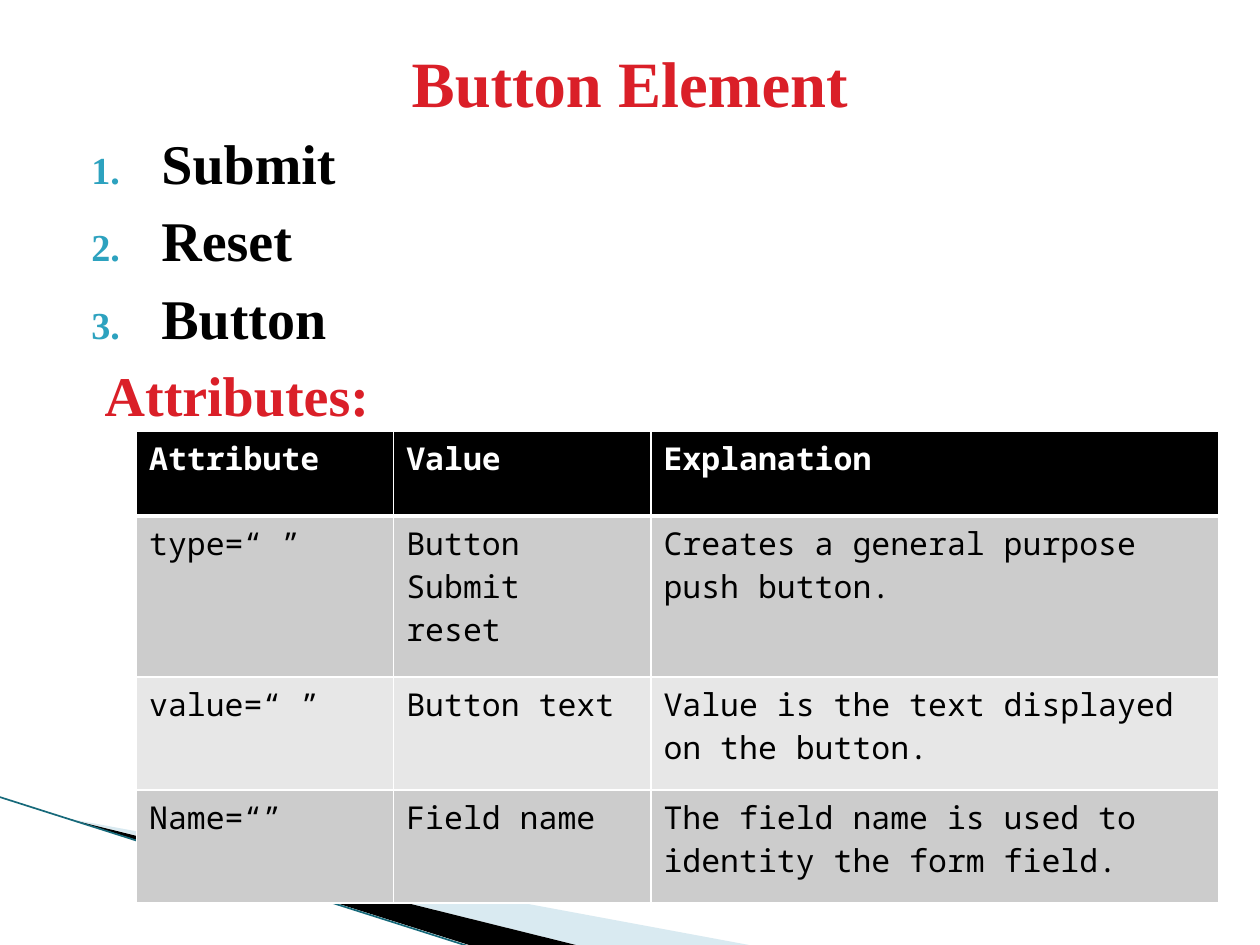
from lxml import etree
from pptx import Presentation
from pptx.dml.color import RGBColor
from pptx.enum.shapes import MSO_CONNECTOR
from pptx.enum.text import MSO_ANCHOR, MSO_AUTO_SIZE, PP_ALIGN
from pptx.oxml.ns import qn
from pptx.util import Pt

STRAIGHT = MSO_CONNECTOR.STRAIGHT
MIDDLE, TOP = MSO_ANCHOR.MIDDLE, MSO_ANCHOR.TOP
NO_FIT = MSO_AUTO_SIZE.NONE
LEFT, CENTER = PP_ALIGN.LEFT, PP_ALIGN.CENTER

COLORS = {
    "red": "DA1F28", "black": "000000", "white": "FFFFFF", "bullet": "2DA2BF",
    "wedge": "A0CBDC", "edge": "16697A", "dark_row": "CCCCCC", "light_row": "E7E7E7",
}
SERIF, MONO = "Times New Roman", "Noto Sans Mono"
BUTTON_TYPES = ["Submit", "Reset", "Button"]
ROWS = [
    ["Attribute", "Value", "Explanation"],
    ["type=“ ”", "Button\nSubmit\nreset", "Creates a general purpose push button."],
    ["value=“ ”", "Button text", "Value is the text displayed on the button."],
    ["Name=“”", "Field name", "The field name is used to identity the form field."],
]
COLUMN_WIDTHS = [147, 147, 324.5]
ROW_HEIGHTS = [48.6, 92, 64.6, 64.6]


def color(name):
    """Return the named colour."""
    return RGBColor.from_string(COLORS[name])


def add_xml(parent, tag, **attributes):
    """Append a DrawingML element and return it."""
    return etree.SubElement(parent, qn(tag), attributes)


def add_solid(parent, name):
    """Append a solid fill of the named colour."""
    add_xml(add_xml(parent, "a:solidFill"), "a:srgbClr", val=COLORS[name])


def set_font(para, face, size, name, bold):
    """Set the font of a whole paragraph."""
    para.font.name, para.font.size, para.font.bold = face, Pt(size), bold
    para.font.color.rgb = color(name)


def place(shape, box):
    """Move a shape to a box given in points."""
    shape.left, shape.top, shape.width, shape.height = map(Pt, box)


def add_wedge(page, points, name, opacity=100):
    """Draw one filled polygon without outline."""
    builder = page.shapes.build_freeform(*points[0], scale=Pt(1))
    builder.add_line_segments(points[1:], close=True)
    wedge = builder.convert_to_shape()
    wedge.shadow.inherit = False
    wedge.fill.solid()
    wedge.fill.fore_color.rgb = color(name)
    wedge.line.fill.background()
    if opacity < 100:
        tint = wedge.fill._xPr.find(qn("a:solidFill"))[0]
        add_xml(tint, "a:alpha", val=str(opacity * 1000))


def add_corner(page, box):
    """Draw the swoosh in the lower left corner."""
    left, top, width, height = box
    right, bottom = left + width, top + height
    add_wedge(page, [(left + 40, top + 13), (right, bottom),
                     (left + 329, bottom), (left + 40, top + 12)], "wedge", 40)
    add_wedge(page, [(left + 39, top + 12), (left + 329, bottom),
                     (left + 268, bottom), (left + 40, top + 12.5)], "black")
    edge = page.shapes.add_connector(
        STRAIGHT, Pt(left), Pt(top), Pt(left + 267), Pt(bottom))
    edge.line.width = Pt(0.95)
    edge.line.color.rgb = color("edge")
    add_xml(edge._element.spPr, "a:effectLst")


def fill_title(page, box):
    """Place and format the slide title."""
    title = page.shapes.title
    place(title, box)
    frame = title.text_frame
    frame.text = "Button Element"
    frame.auto_size, frame.vertical_anchor = NO_FIT, MIDDLE
    para = frame.paragraphs[0]
    para.alignment = CENTER
    set_font(para, SERIF, 36.9, "red", True)


def fill_list(page, box):
    """Place the numbered button types and the heading below them."""
    body = page.placeholders[1]
    place(body, box)
    frame = body.text_frame
    frame.text = "\n".join(BUTTON_TYPES + ["Attributes:"])
    frame.auto_size, frame.vertical_anchor = NO_FIT, TOP
    for index, para in enumerate(frame.paragraphs):
        numbered = index < len(BUTTON_TYPES)
        properties = para._p.get_or_add_pPr()
        properties.set("marL", str(Pt(49 if numbered else 16.6)))
        properties.set("indent", str(Pt(-40 if numbered else 0)))
        if numbered:
            tint = add_xml(properties, "a:buClr")
            add_xml(tint, "a:srgbClr", val=COLORS["bullet"])
            add_xml(properties, "a:buSzPct", val="68000")
            add_xml(properties, "a:buFont", typeface=SERIF)
            add_xml(properties, "a:buAutoNum", type="arabicPeriod")
        else:
            add_xml(properties, "a:buNone")
        para.alignment = LEFT
        para.space_before = Pt(5.7 if index else 0)
        set_font(para, SERIF, 32, "black" if numbered else "red", True)


def format_cell(cell, text, row):
    """Fill one table cell, with its text, colour and borders."""
    header = row == 0
    cell.text = text
    for para in cell.text_frame.paragraphs:
        set_font(para, MONO, 18, "white" if header else "black", header)
    properties = cell._tc.get_or_add_tcPr()
    for side in ("L", "R", "T", "B"):
        thick = (header and side == "B") or (row == 1 and side == "T")
        border = add_xml(properties, f"a:ln{side}", w=str(Pt(3 if thick else 1)))
        add_solid(border, "white")
    cell.fill.solid()
    band = "dark_row" if row % 2 else "light_row"
    cell.fill.fore_color.rgb = color("black" if header else band)


def add_attribute_table(page, box):
    """Build the table of button attributes."""
    frame = page.shapes.add_table(len(ROWS), len(COLUMN_WIDTHS), *map(Pt, box))
    table = frame.table
    for column, width in zip(table.columns, COLUMN_WIDTHS):
        column.width = Pt(width)
    for row, (texts, height) in enumerate(zip(ROWS, ROW_HEIGHTS)):
        table.rows[row].height = Pt(height)
        for column, text in enumerate(texts):
            format_cell(table.cell(row, column), text, row)


def main():
    """Build and save the slide."""
    deck = Presentation()
    deck.slide_width, deck.slide_height = Pt(720), Pt(540)
    page = deck.slides.add_slide(deck.slide_layouts[1])
    add_corner(page, (0, 455.5, 428, 85))
    fill_list(page, (36, 70, 648, 403))
    fill_title(page, (36, 21.6, 648, 50.4))
    add_attribute_table(page, (78, 246.2, sum(COLUMN_WIDTHS), sum(ROW_HEIGHTS)))
    deck.save("out.pptx")


if __name__ == "__main__":
    main()
